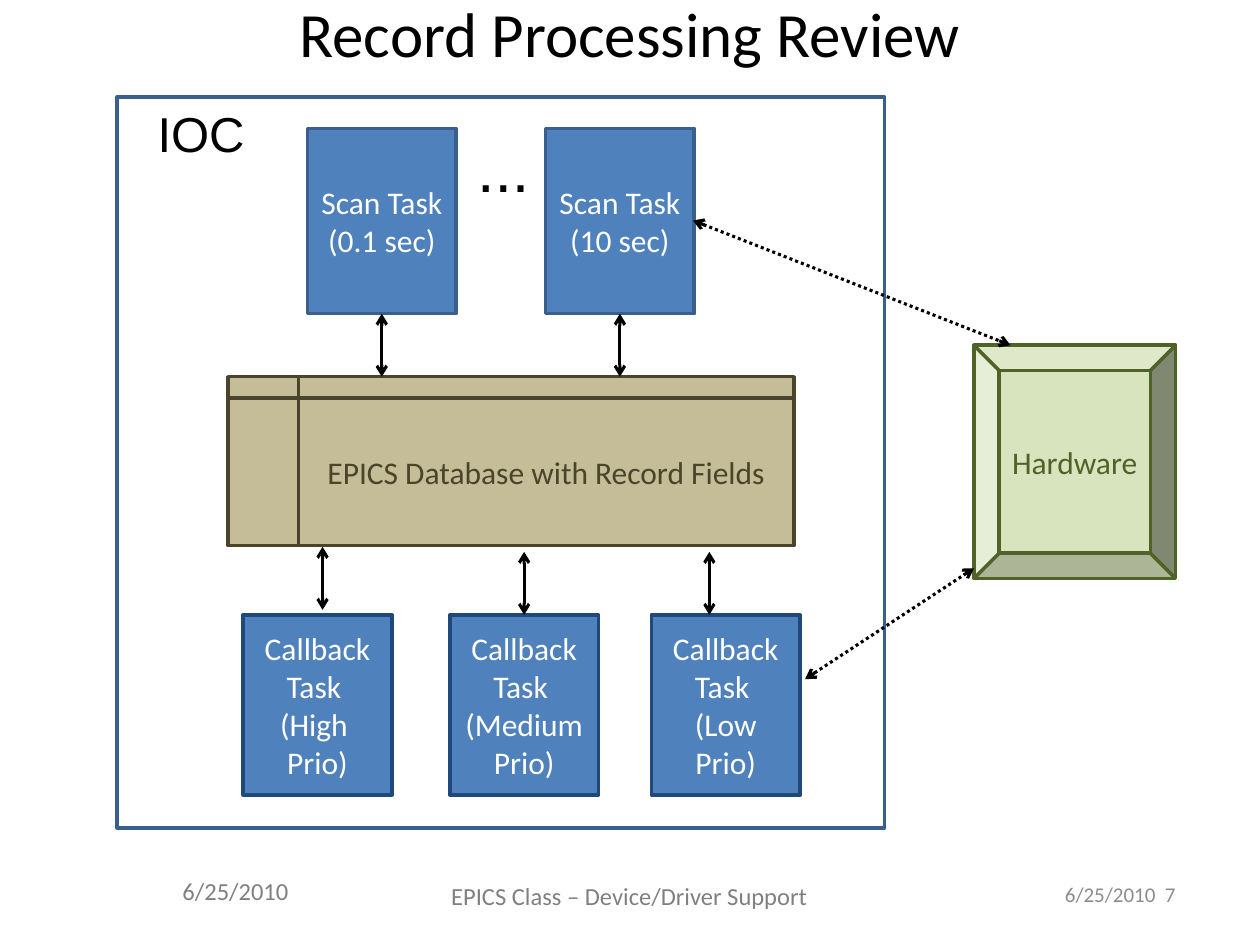
from lxml.etree import SubElement
from pptx import Presentation
from pptx.dml.color import RGBColor
from pptx.enum.dml import MSO_LINE
from pptx.enum.shapes import MSO_CONNECTOR, MSO_SHAPE as SHAPE
from pptx.enum.text import MSO_ANCHOR as ANCHOR, PP_ALIGN as ALIGN
from pptx.oxml.ns import qn
from pptx.util import Inches, Pt

COLORS = {
    "black": "000000", "white": "FFFFFF", "footer": "808080", "number": "8C8C8C",
    "task": "4F81BD", "scan_edge": "3A5F8C", "callback_edge": "1F497D",
    "database": "C4BD97", "database_edge": "4A452A",
    "hardware": "D7E4BD", "hardware_edge": "4F6228",
}
TASK_WIDTH = 1.18


def rgb(name):
    """Return the named colour."""
    return RGBColor.from_string(COLORS[name])


def write(shape, text, size, color, font="Calibri", align=ALIGN.CENTER, anchor=ANCHOR.MIDDLE):
    """Fill a shape with text, one paragraph to a line."""
    frame = shape.text_frame
    frame.word_wrap = True
    frame.vertical_anchor = anchor
    frame.text = text
    for paragraph in frame.paragraphs:
        paragraph.alignment = align
        paragraph.font.size = Pt(size)
        paragraph.font.name = font
        paragraph.font.color.rgb = rgb(color)


def add_label(slide, box, text, size, color, **style):
    """Add a text box."""
    label = slide.shapes.add_textbox(*map(Inches, box))
    write(label, text, size, color, **style)


def add_block(slide, kind, box, fill=None, edge=None, text="", color="white"):
    """Add a preset shape with an optional fill, outline and caption."""
    block = slide.shapes.add_shape(kind, *map(Inches, box))
    block.shadow.inherit = False
    if fill:
        block.fill.solid()
        block.fill.fore_color.rgb = rgb(fill)
    else:
        block.fill.background()
    if edge:
        block.line.color.rgb = rgb(edge)
        block.line.width = Pt(2)
    else:
        block.line.fill.background()
    if text:
        write(block, text, 18, color)


def add_arrow(slide, start, end, dotted=False):
    """Add a line with an open arrowhead at both ends."""
    arrow = slide.shapes.add_connector(MSO_CONNECTOR.STRAIGHT, *map(Inches, (*start, *end)))
    arrow.line.color.rgb = rgb("black")
    arrow.line.width = Pt(1.75)
    if dotted:
        arrow.line.dash_style = MSO_LINE.ROUND_DOT
    line = arrow.line._get_or_add_ln()
    for end_tag in ("a:headEnd", "a:tailEnd"):
        SubElement(line, qn(end_tag), type="arrow")
    SubElement(arrow._element.spPr, qn("a:effectLst"))


def add_title(slide, left, top, width, height):
    """Place and format the slide title."""
    title = slide.shapes.title
    title.left, title.top, title.width, title.height = map(Inches, (left, top, width, height))
    write(title, "Record Processing Review", 36, "black")


def add_ioc(slide, left, top, width, height):
    """Draw the IOC frame with its tasks and database."""
    add_block(slide, SHAPE.FLOWCHART_PROCESS, (left, top, width, height), edge="scan_edge")
    add_label(slide, (left + 0.12, top, 1.09, 0.57), "IOC", 28, "black",
              font="Arial", anchor=ANCHOR.TOP)
    add_label(slide, (left + 2.73, top + 0.21, 0.67, 0.71), "...", 36, "black",
              font="Arial", anchor=ANCHOR.TOP)
    add_block(slide, SHAPE.FLOWCHART_INTERNAL_STORAGE, (left + 0.88, top + 2.22, 4.49, 1.34),
              "database", "database_edge", "EPICS Database with Record Fields", "database_edge")

    for x, period in ((1.51, "0.1 sec"), (3.4, "10 sec")):
        add_block(slide, SHAPE.FLOWCHART_PROCESS, (left + x, top + 0.25, TASK_WIDTH, 1.47),
                  "task", "scan_edge", f"Scan Task\n({period})")
        center = left + x + TASK_WIDTH / 2
        add_arrow(slide, (center, top + 1.72), (center, top + 2.22))

    callbacks = (
        (1, "(High \nPrio)", 1.63, 3.57),
        (2.64, "(Medium Prio)", 3.23, 3.61),
        (4.24, "(Low Prio)", 4.7, 3.61),
    )
    for x, priority, arrow_x, arrow_y in callbacks:
        add_block(slide, SHAPE.FLOWCHART_PROCESS, (left + x, top + 4.11, TASK_WIDTH, 1.43),
                  "task", "callback_edge", f"Callback Task \n{priority}")
        add_arrow(slide, (left + arrow_x, top + arrow_y), (left + arrow_x, top + arrow_y + 0.5))


def add_hardware(slide, left, top, width, height):
    """Draw the hardware block and its dotted links to the tasks."""
    add_block(slide, SHAPE.BEVEL, (left, top, width, height),
              "hardware", "hardware_edge", "Hardware", "hardware_edge")
    add_arrow(slide, (left - 2.23, top - 0.99), (left + 0.29, top), dotted=True)
    add_arrow(slide, (left - 1.34, top + 2.65), (left, top + 1.77), dotted=True)


def add_footer(slide, left, top, width, height):
    """Place the date, the class name and the slide number."""
    add_block(slide, SHAPE.RECTANGLE, (left, top, 1.6, height), "white")
    write(slide.shapes[-1], "6/25/2010", 14, "footer", align=ALIGN.LEFT, anchor=ANCHOR.TOP)
    add_label(slide, (left + 1.63, top, 4.03, height + 0.02),
              "EPICS Class – Device/Driver Support", 14, "footer")
    add_label(slide, (left + width - 2.33, top, 2.33, height), "6/25/2010  7", 12, "number",
              align=ALIGN.RIGHT)


def main():
    """Build and save the slide."""
    deck = Presentation()
    deck.slide_width, deck.slide_height = Inches(10), Inches(7.5)
    slide = deck.slides.add_slide(deck.slide_layouts[5])
    add_title(slide, 0, 0, 10, 0.52)
    add_footer(slide, 1.35, 6.9, 8.08, 0.4)
    add_ioc(slide, 0.93, 0.77, 6.09, 5.8)
    add_hardware(slide, 7.73, 2.74, 1.6, 1.85)
    deck.save("out.pptx")


if __name__ == "__main__":
    main()
